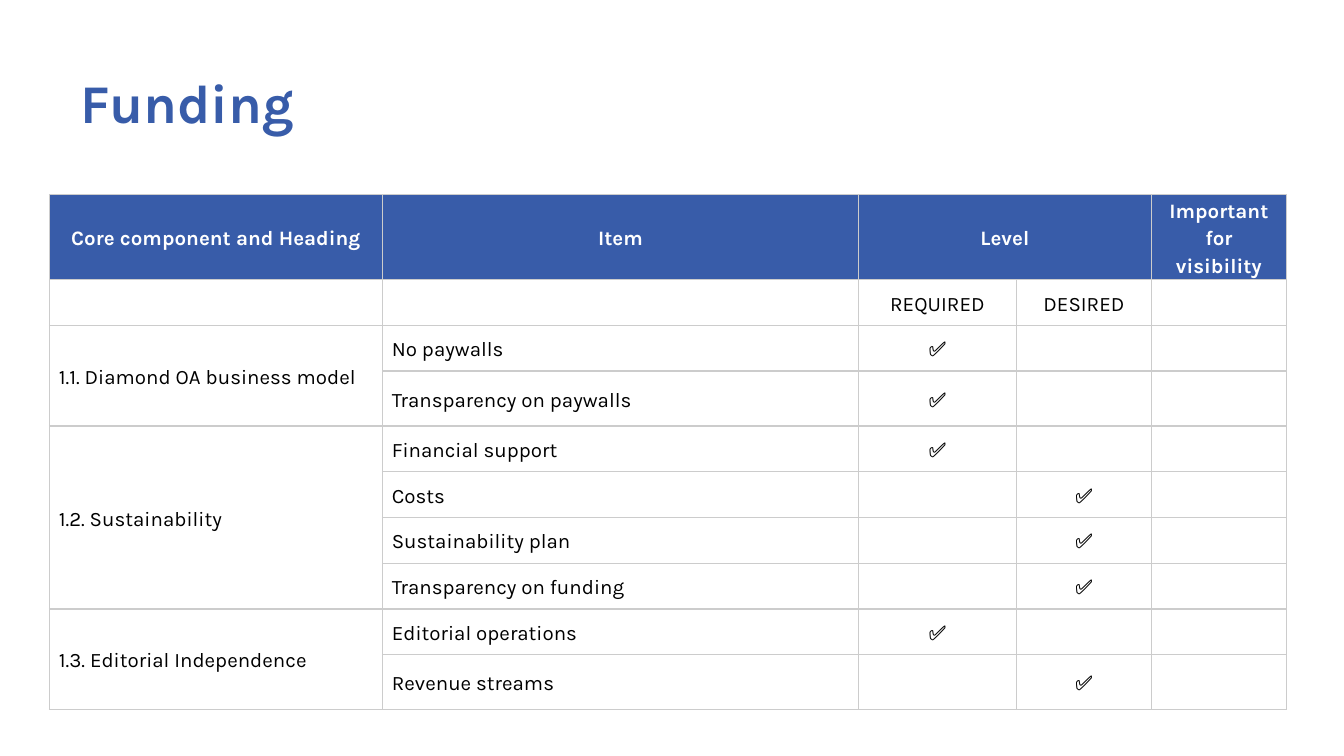
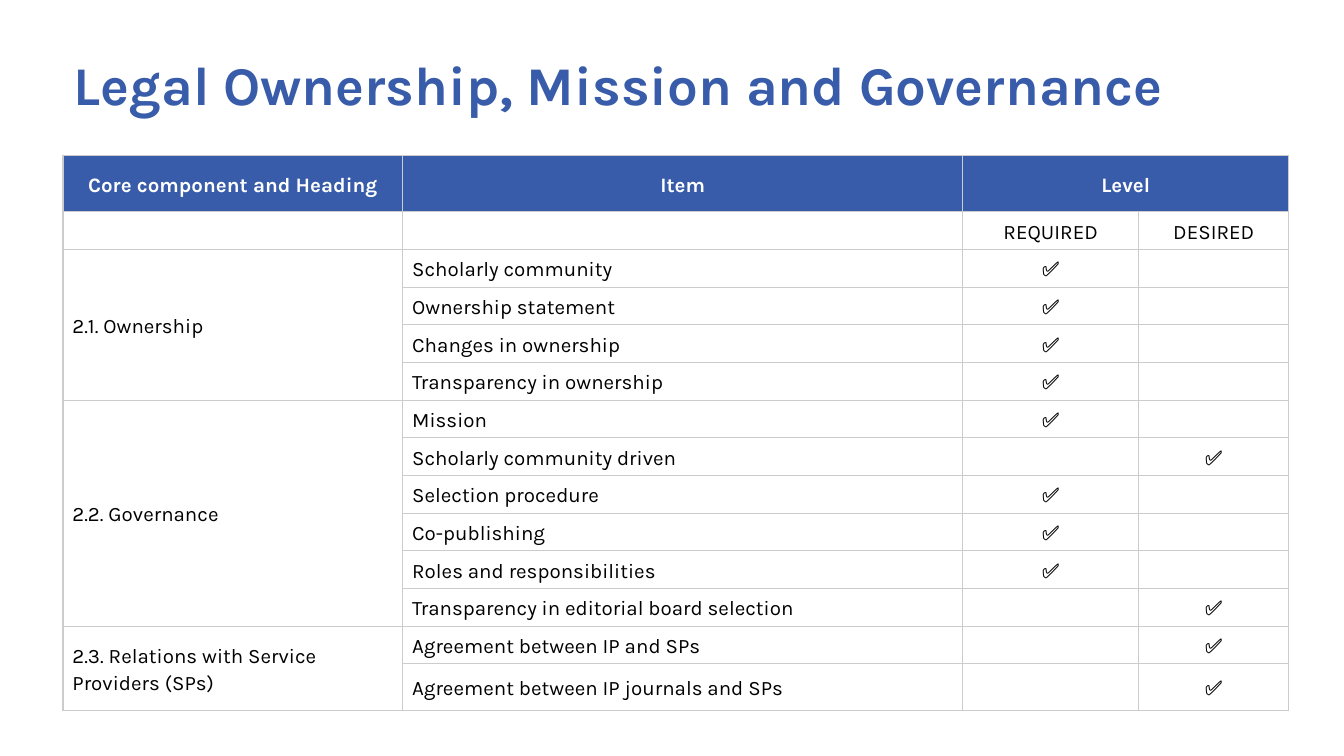
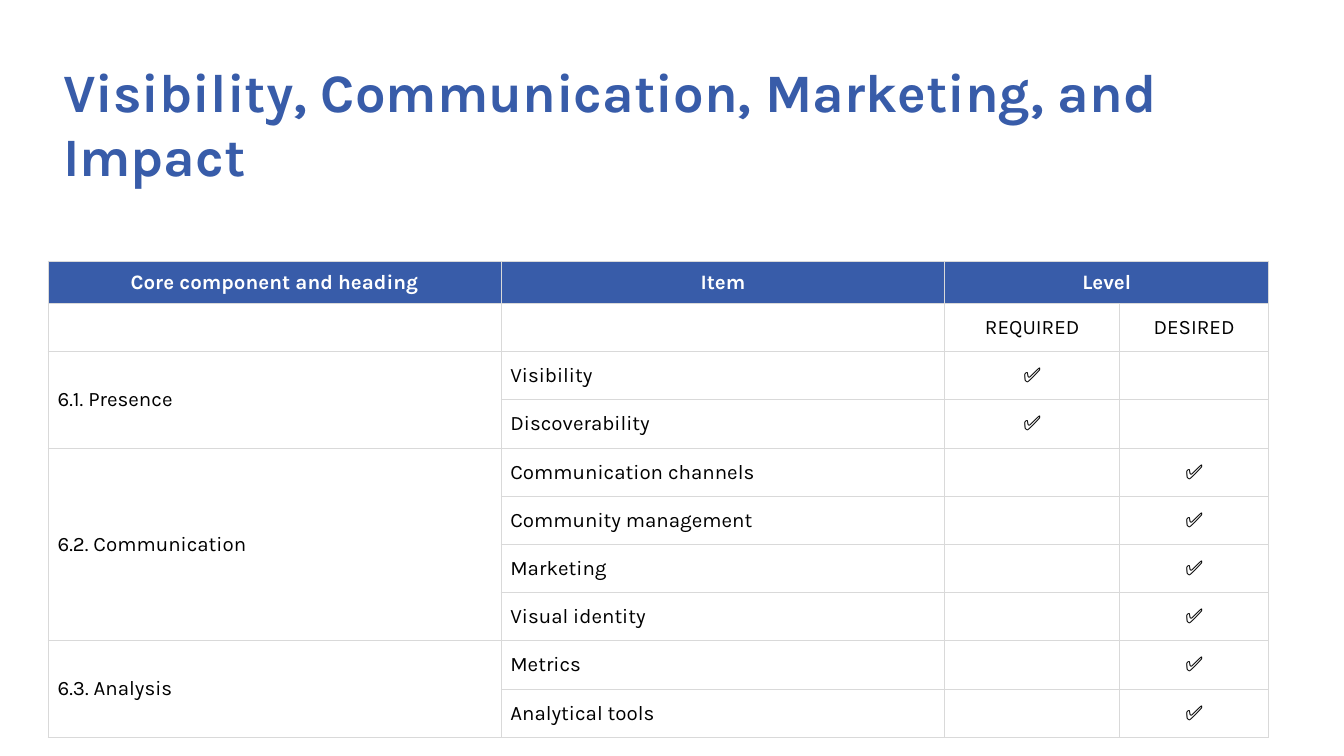
from lxml import etree
from pptx import Presentation
from pptx.dml.color import RGBColor
from pptx.enum.text import MSO_ANCHOR, MSO_AUTO_SIZE, PP_ALIGN
from pptx.oxml.ns import qn
from pptx.util import Pt

LEFT, CENTER = PP_ALIGN.LEFT, PP_ALIGN.CENTER
TOP, MIDDLE = MSO_ANCHOR.TOP, MSO_ANCHOR.MIDDLE
NO_AUTOFIT = MSO_AUTO_SIZE.NONE

COLORS = {
    "blue": "385CA9",
    "white": "FFFFFF",
    "black": "000000",
    "grid": "CCCCCC",
    "light_grid": "D9D9D9",
}
FONT = "Karla"
CELL_SIZE = 11
CHECK = "✅"
REQUIRED, DESIRED = 2, 3
TITLE_ONLY = 5

FUNDING = [
    ("1.1. Diamond OA business model", [
        ("No paywalls", REQUIRED),
        ("Transparency on paywalls", REQUIRED),
    ]),
    ("1.2. Sustainability", [
        ("Financial support", REQUIRED),
        ("Costs", DESIRED),
        ("Sustainability plan", DESIRED),
        ("Transparency on funding", DESIRED),
    ]),
    ("1.3. Editorial Independence", [
        ("Editorial operations", REQUIRED),
        ("Revenue streams", DESIRED),
    ]),
]
GOVERNANCE = [
    ("2.1. Ownership", [
        ("Scholarly community", REQUIRED),
        ("Ownership statement", REQUIRED),
        ("Changes in ownership", REQUIRED),
        ("Transparency in ownership", REQUIRED),
    ]),
    ("2.2. Governance", [
        ("Mission", REQUIRED),
        ("Scholarly community driven", DESIRED),
        ("Selection procedure", REQUIRED),
        ("Co-publishing", REQUIRED),
        ("Roles and responsibilities", REQUIRED),
        ("Transparency in editorial board selection", DESIRED),
    ]),
    ("2.3. Relations with Service Providers (SPs)", [
        ("Agreement between IP and SPs", DESIRED),
        ("Agreement between IP journals and SPs", DESIRED),
    ]),
]
VISIBILITY = [
    ("6.1. Presence", [
        ("Visibility", REQUIRED),
        ("Discoverability", REQUIRED),
    ]),
    ("6.2. Communication", [
        ("Communication channels", DESIRED),
        ("Community management", DESIRED),
        ("Marketing", DESIRED),
        ("Visual identity", DESIRED),
    ]),
    ("6.3. Analysis", [
        ("Metrics", DESIRED),
        ("Analytical tools", DESIRED),
    ]),
]


def rgb(name):
    return RGBColor.from_string(COLORS[name])


def add_run(p, text, size, color, bold):
    r = p.add_run()
    r.text = text
    r.font.name = FONT
    r.font.size = Pt(size)
    r.font.bold = bold
    r.font.color.rgb = rgb(color)


def add_title_slide(prs, title, box, size=29.2, inset=7.2):
    s = prs.slides.add_slide(prs.slide_layouts[TITLE_ONLY])
    sp = s.shapes.title
    sp.left, sp.top, sp.width, sp.height = (Pt(v) for v in box)
    tf = sp.text_frame
    tf.word_wrap = True
    tf.auto_size = NO_AUTOFIT
    tf.vertical_anchor = TOP
    tf.margin_top = tf.margin_right = tf.margin_bottom = Pt(7.2)
    tf.margin_left = Pt(inset)
    p = tf.paragraphs[0]
    p.alignment = LEFT
    add_run(p, title, size, "blue", True)
    return s


def add_borders(cell, color, width):
    tc_pr = cell._tc.get_or_add_tcPr()
    for side in ("a:lnL", "a:lnR", "a:lnT", "a:lnB"):
        line = etree.SubElement(tc_pr, qn(side), w=str(Pt(width)))
        fill = etree.SubElement(line, qn("a:solidFill"))
        etree.SubElement(fill, qn("a:srgbClr"), val=COLORS[color])


def format_cell(cell, border, margin, header):
    add_borders(cell, *border)
    if header:
        cell.fill.solid()
        cell.fill.fore_color.rgb = rgb("blue")
    else:
        cell.fill.background()
    cell.vertical_anchor = MIDDLE
    cell.margin_left = cell.margin_right = Pt(5.04)
    cell.margin_top = cell.margin_bottom = Pt(margin)


def write_cell(cell, text, align, spacing, header):
    p = cell.text_frame.paragraphs[0]
    if not text:
        etree.SubElement(p._p, qn("a:endParaRPr"), sz=str(CELL_SIZE * 100))
        return
    p.alignment = align
    p.line_spacing = spacing
    add_run(p, text, CELL_SIZE, "white" if header else "black", header)


def table_rows(headers, groups):
    width = len(headers)
    rows = [headers, ["", "", "REQUIRED", "DESIRED"]]
    for heading, items in groups:
        for i, (item, level) in enumerate(items):
            row = ["" if i else heading, item, "", ""]
            row[level] = CHECK
            rows.append(row)
    return [row + [""] * (width - len(row)) for row in rows]


def add_level_table(s, left, top, widths, heights, headers, groups,
                    border=("grid", 0.75), margin=0, spacing=1.15):
    rows = table_rows(headers, groups)
    frame = s.shapes.add_table(len(rows), len(widths), Pt(left), Pt(top),
                               Pt(sum(widths)), Pt(sum(heights)))
    table = frame.table
    table.first_row = table.horz_banding = False
    for column, width in zip(table.columns, widths):
        column.width = Pt(width)
    for row, height in zip(table.rows, heights):
        row.height = Pt(height)
    for i, row in enumerate(rows):
        for j, text in enumerate(row):
            header = i == 0
            align = CENTER if i < 2 or j > 1 else LEFT
            cell = table.cell(i, j)
            format_cell(cell, border, margin, header)
            write_cell(cell, text, align, spacing, header)
    table.cell(0, REQUIRED).merge(table.cell(0, DESIRED))
    first = 2
    for _, items in groups:
        last = first + len(items) - 1
        table.cell(first, 0).merge(table.cell(last, 0))
        first = last + 1


def main():
    prs = Presentation()
    prs.slide_width, prs.slide_height = Pt(720), Pt(405)
    headers = ["Core component and Heading", "Item", "Level", ""]

    s = add_title_slide(prs, "Funding", (36, 29.5, 671, 45.4))
    add_level_table(s, 26.5, 104.3, [178.4, 255, 84.7, 72.3, 72.3],
                    [45.5, 24.5, 24.5, 29.5] + [24.5] * 5 + [29.5],
                    headers + ["Important for visibility"], FUNDING)

    s = add_title_slide(prs, "Legal Ownership, Mission and Governance",
                        (32.4, 20.2, 656.6, 45.4))
    add_level_table(s, 33.8, 83.2, [182, 300, 94.3, 80.4],
                    [30.3] + [20.2] * 12 + [25], headers, GOVERNANCE)

    s = add_title_slide(prs, "Visibility, Communication, Marketing, and Impact",
                        (12.2, 23.8, 682.6, 49.7), size=29, inset=21.6)
    add_level_table(s, 25.8, 139.8, [242.6, 237.8, 93.7, 79.8],
                    [22.8] + [25.85] * 9,
                    ["Core component and heading", "Item", "Level", ""],
                    VISIBILITY, ("light_grid", 0.5), 2.88, 1.0)

    prs.save("out.pptx")


if __name__ == "__main__":
    main()
